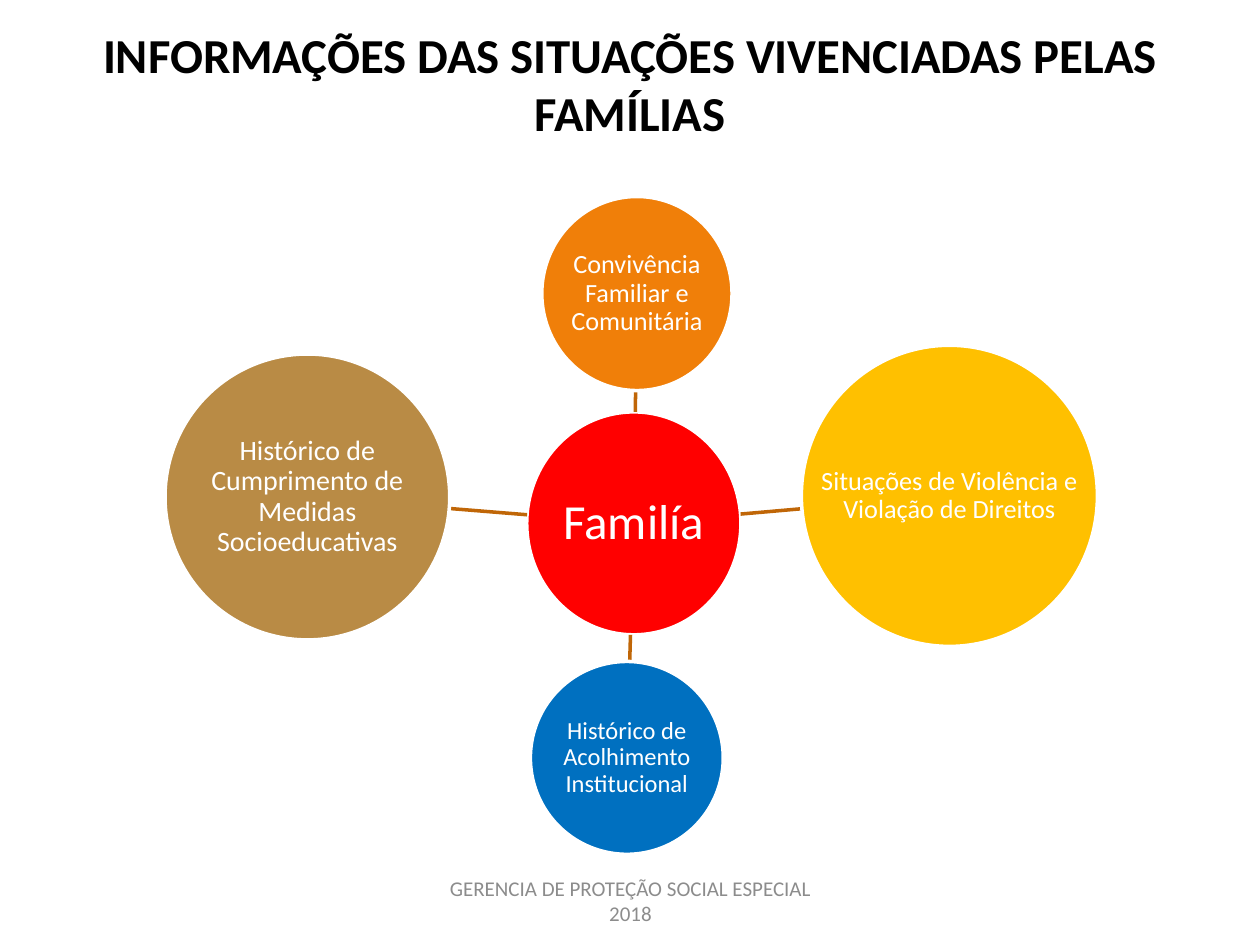
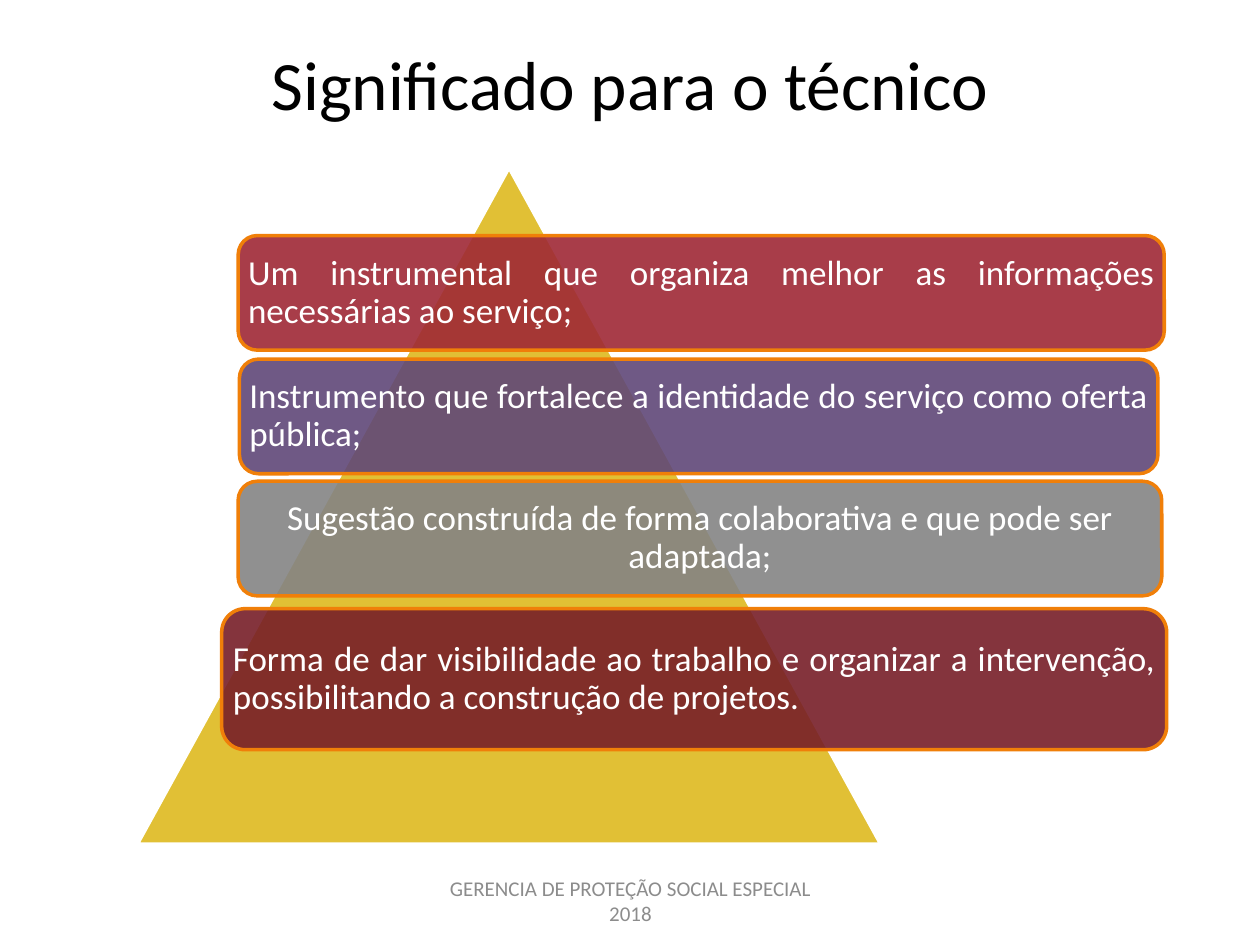
"""Builds two slides on family situations and what the tool means to the technician."""
from dataclasses import dataclass
from math import hypot

from lxml import etree
from pptx import Presentation
from pptx.dml.color import RGBColor
from pptx.enum.shapes import MSO_CONNECTOR, MSO_SHAPE
from pptx.enum.text import MSO_ANCHOR, PP_ALIGN
from pptx.oxml.ns import qn
from pptx.shapes.autoshape import Shape
from pptx.slide import Slide
from pptx.util import Pt

STRAIGHT = MSO_CONNECTOR.STRAIGHT
OVAL, TRIANGLE, ROUNDED = MSO_SHAPE.OVAL, MSO_SHAPE.ISOSCELES_TRIANGLE, MSO_SHAPE.ROUNDED_RECTANGLE
MIDDLE = MSO_ANCHOR.MIDDLE
CENTER, JUSTIFY = PP_ALIGN.CENTER, PP_ALIGN.JUSTIFY


@dataclass(frozen=True)
class Theme:
    font: str = "Calibri"
    white: str = "FFFFFF"
    ink: str = "000000"
    footer: str = "8C8C8C"
    spoke: str = "C06607"
    orange: str = "F07F09"
    red: str = "FF0000"
    yellow: str = "FFC000"
    blue: str = "0070C0"
    tan: str = "B98B45"
    gold: str = "E1C035"
    crimson: str = "9F2936"
    purple: str = "604878"
    gray: str = "848484"
    maroon: str = "771F28"
    long_title_size: float = 27.9
    title_size: float = 39.6
    footer_size: float = 12
    hub_size: float = 28
    statement_size: float = 20
    line_width: float = 2
    statement_alpha: int = 90


THEME = Theme()


@dataclass(frozen=True)
class Box:
    left: float
    top: float
    width: float
    height: float

    @property
    def center(self) -> tuple[float, float]:
        return self.left + self.width / 2, self.top + self.height / 2

    def lengths(self) -> list[Pt]:
        return [Pt(v) for v in (self.left, self.top, self.width, self.height)]


@dataclass(frozen=True)
class Topic:
    text: str
    box: Box
    color: str
    size: float
    side_inset: float = 1


@dataclass(frozen=True)
class Statement:
    text: str
    box: Box
    color: str
    align: PP_ALIGN = JUSTIFY


TITLE_BOX = Box(36, 21.6, 648, 51.8)
FOOTER_BOX = Box(246.2, 500.4, 228.2, 28.8)
FOOTER = "GERENCIA DE PROTEÇÃO SOCIAL ESPECIAL 2018"
PYRAMID_BOX = Box(78.5, 95.8, 424.8, 386.6)

FAMILY = Topic("Familía", Box(301, 235.4, 122.4, 127.4), THEME.red, THEME.hub_size)
SITUATIONS = [
    Topic("Convivência Familiar e Comunitária",
          Box(309.6, 112.3, 108.7, 110.9), THEME.orange, 15, 0),
    Topic("Situações de Violência e Violação de Direitos",
          Box(457.9, 197.3, 169.2, 172.1), THEME.yellow, 15, -18),
    Topic("Histórico de Acolhimento Institucional",
          Box(303.1, 378, 110.2, 110.2), THEME.blue, 14),
    Topic("Histórico de Cumprimento de Medidas Socioeducativas",
          Box(94.3, 202.3, 162.7, 163.4), THEME.tan, 16),
]
STATEMENTS = [
    Statement("Um instrumental que organiza melhor as informações necessárias ao serviço;",
              Box(136.1, 134.6, 529.2, 65.5), THEME.crimson),
    Statement("Instrumento que fortalece a identidade do serviço como oferta pública;",
              Box(136.8, 205.2, 524.9, 65.5), THEME.purple),
    Statement("Sugestão construída de forma colaborativa e que pode ser adaptada;",
              Box(136.1, 275, 527.8, 65.5), THEME.gray, CENTER),
    Statement("Forma de dar visibilidade ao trabalho e organizar a intervenção, "
              "possibilitando a construção de projetos.",
              Box(126.7, 347.8, 540, 80.6), THEME.maroon),
]


def apply(target: object, values: dict[str, object]) -> None:
    """Set every attribute named in the dict."""
    for name, value in values.items():
        setattr(target, name, value)


def write(shape: Shape, text: str, size: float, color: str, *, align: PP_ALIGN = CENTER,
          bold: bool = False, spacing: float = 1.0,
          insets: tuple[float, float] = (7.2, 3.6)) -> None:
    """Fill a shape with one formatted paragraph."""
    side, edge = (Pt(v) for v in insets)
    frame = shape.text_frame
    apply(frame, {"word_wrap": True, "vertical_anchor": MIDDLE, "margin_left": side,
                  "margin_right": side, "margin_top": edge, "margin_bottom": edge})
    paragraph = frame.paragraphs[0]
    apply(paragraph, {"alignment": align, "line_spacing": spacing})
    run = paragraph.add_run()
    run.text = text
    apply(run.font, {"name": THEME.font, "size": Pt(size), "bold": bold})
    run.font.color.rgb = RGBColor.from_string(color)


def add_figure(slide: Slide, kind: MSO_SHAPE, box: Box, fill: str, outline: str) -> Shape:
    """Draw a filled and outlined preset shape."""
    figure = slide.shapes.add_shape(kind, *box.lengths())
    figure.shadow.inherit = False
    figure.fill.solid()
    figure.fill.fore_color.rgb = RGBColor.from_string(fill)
    figure.line.color.rgb = RGBColor.from_string(outline)
    figure.line.width = Pt(THEME.line_width)
    return figure


def add_label(slide: Slide, box: Box, text: str, size: float, color: str,
              bold: bool = False) -> None:
    """Place a centred text box."""
    write(slide.shapes.add_textbox(*box.lengths()), text, size, color, bold=bold)


def add_page(deck: Presentation, title: str, size: float, bold: bool = False) -> Slide:
    """Add a blank slide with the shared title and footer."""
    slide = deck.slides.add_slide(deck.slide_layouts[6])
    add_label(slide, TITLE_BOX, title, size, THEME.ink, bold)
    add_label(slide, FOOTER_BOX, FOOTER, THEME.footer_size, THEME.footer)
    return slide


def add_topic(slide: Slide, topic: Topic) -> None:
    """Draw one circle of the family diagram."""
    circle = add_figure(slide, OVAL, topic.box, topic.color, THEME.white)
    write(circle, topic.text, topic.size, THEME.white, spacing=0.9,
          insets=(topic.side_inset, 1))


def rim_point(box: Box, toward: Box) -> tuple[float, float]:
    """Find where the line to another centre leaves an ellipse."""
    (x, y), (far_x, far_y) = box.center, toward.center
    dx, dy = far_x - x, far_y - y
    reach = hypot(2 * dx / box.width, 2 * dy / box.height)
    return x + dx / reach, y + dy / reach


def add_spoke(slide: Slide, hub: Box, outer: Box) -> None:
    """Draw the line between the rims of two circles."""
    ends = (*rim_point(hub, outer), *rim_point(outer, hub))
    spoke = slide.shapes.add_connector(STRAIGHT, *(Pt(v) for v in ends))
    spoke.line.color.rgb = RGBColor.from_string(THEME.spoke)
    spoke.line.width = Pt(THEME.line_width)
    etree.SubElement(spoke._element.spPr, qn("a:effectLst"))


def add_statement(slide: Slide, statement: Statement) -> None:
    """Draw one translucent bar over the pyramid."""
    bar = add_figure(slide, ROUNDED, statement.box, statement.color, THEME.orange)
    tint = bar._element.spPr.find(qn("a:solidFill"))[0]
    etree.SubElement(tint, qn("a:alpha"), val=str(THEME.statement_alpha * 1000))
    write(bar, statement.text, THEME.statement_size, THEME.white,
          align=statement.align, spacing=0.9, insets=(2.5, 2.5))


def build_family_slide(deck: Presentation) -> None:
    """Build the diagram of situations around the family."""
    slide = add_page(deck, "INFORMAÇÕES DAS SITUAÇÕES VIVENCIADAS PELAS FAMÍLIAS",
                     THEME.long_title_size, bold=True)
    add_topic(slide, FAMILY)
    for situation in SITUATIONS:
        add_spoke(slide, FAMILY.box, situation.box)
        add_topic(slide, situation)


def build_meaning_slide(deck: Presentation) -> None:
    """Build the pyramid with its four statements."""
    slide = add_page(deck, "Significado para o técnico", THEME.title_size)
    add_figure(slide, TRIANGLE, PYRAMID_BOX, THEME.gold, THEME.white)
    for statement in STATEMENTS:
        add_statement(slide, statement)


def main() -> None:
    """Build and save the presentation."""
    deck = Presentation()
    apply(deck, {"slide_width": Pt(720), "slide_height": Pt(540)})
    build_family_slide(deck)
    build_meaning_slide(deck)
    deck.save("out.pptx")


if __name__ == "__main__":
    main()
